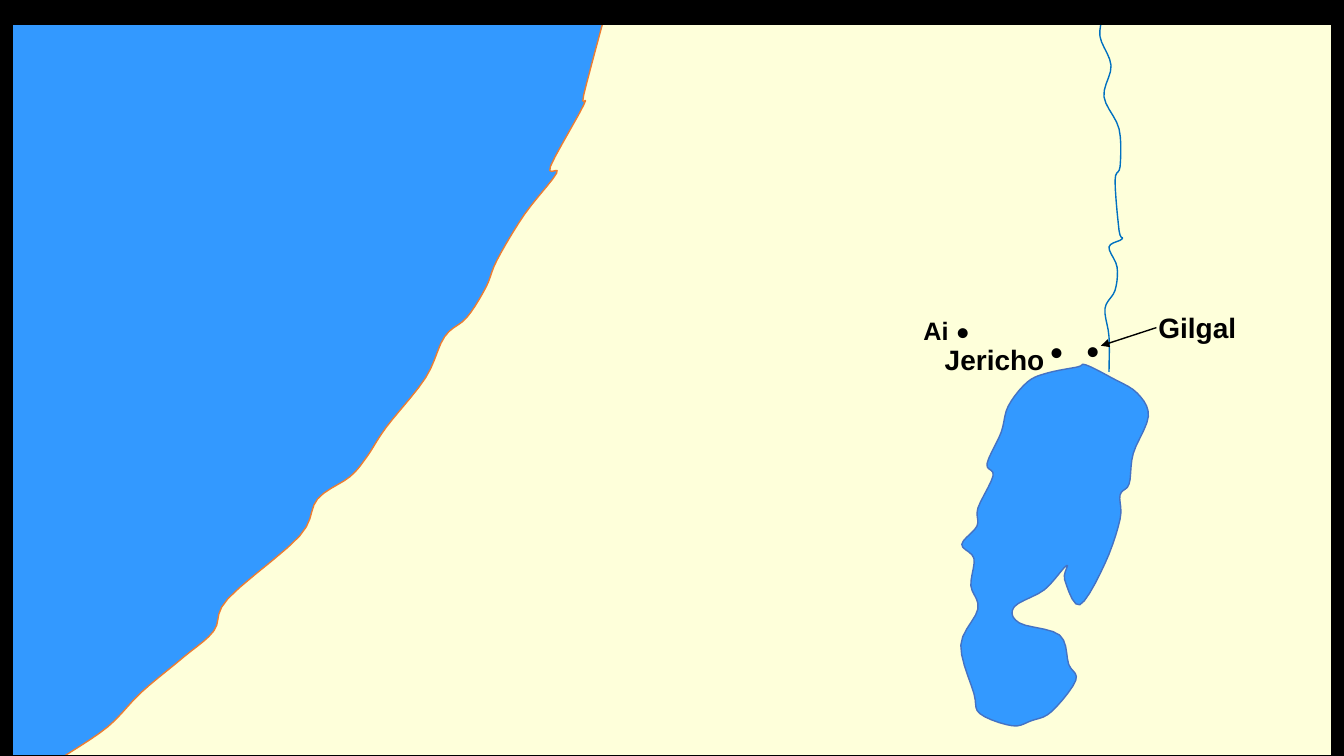
from lxml import etree
from pptx import Presentation
from pptx.dml.color import RGBColor
from pptx.enum.shapes import MSO_CONNECTOR, MSO_SHAPE
from pptx.enum.text import MSO_ANCHOR, PP_ALIGN
from pptx.oxml.ns import qn
from pptx.util import Inches, Pt

STRAIGHT, RECTANGLE = MSO_CONNECTOR.STRAIGHT, MSO_SHAPE.RECTANGLE
LEFT, CENTER, MIDDLE = PP_ALIGN.LEFT, PP_ALIGN.CENTER, MSO_ANCHOR.MIDDLE

LAND = RGBColor(0xFE, 0xFF, 0xDA)
WATER = RGBColor(0x33, 0x99, 0xFF)
COAST = RGBColor(0xED, 0x7D, 0x31)
SHORE = RGBColor(0x44, 0x72, 0xC4)
RIVER = RGBColor(0x00, 0x70, 0xC0)
BLACK = RGBColor(0x00, 0x00, 0x00)

CURVE_STEPS = 5
LABEL_HEIGHT = 0.44

# Turning points of the waters, in inches from the map corner
SEA_COAST = [
    (0.64, 7.5), (1.07, 7.21), (1.4, 6.87), (1.82, 6.52), (2.12, 6.26), (2.26, 5.94),
    (2.97, 5.32), (3.15, 4.95), (3.47, 4.73), (3.64, 4.53), (3.83, 4.24), (4.22, 3.75),
    (4.41, 3.34), (4.63, 3.15), (4.82, 2.85), (4.93, 2.58), (5.2, 2.13), (5.52, 1.72),
    (5.46, 1.65), (5.79, 1.04), (5.79, 0.94), (6.01, 0.11),
]
SEA_CORNERS = [(0, 0.11), (0, 7.5)]
LAKE_SHORE = [
    (10.69, 3.64), (10.39, 3.7), (10.19, 3.79), (10, 4.03), (9.93, 4.29), (9.79, 4.6),
    (9.85, 4.72), (9.7, 5.04), (9.69, 5.22), (9.54, 5.4), (9.66, 5.54), (9.63, 5.81),
    (9.7, 6.04), (9.53, 6.4), (9.66, 6.88), (9.72, 7.08), (10.04, 7.2), (10.23, 7.15),
    (10.43, 7.06), (10.67, 6.75), (10.6, 6.59), (10.51, 6.3), (10.11, 6.18), (10.06, 6.02),
    (10.36, 5.85), (10.58, 5.61), (10.56, 5.75), (10.71, 6), (10.96, 5.59), (11.11, 5.15),
    (11.11, 4.91), (11.2, 4.8), (11.24, 4.5), (11.39, 4.13), (11.28, 3.9), (11.03, 3.75),
    (10.77, 3.62),
]
RIVER_COURSE = [
    (10.95, 0.11), (10.91, 0.36), (11.02, 0.65), (10.95, 0.96), (11.1, 1.28), (11.11, 1.65),
    (11.06, 1.79), (11.1, 2.29), (11.13, 2.37), (11, 2.45), (11.08, 2.65), (11.06, 2.88),
    (10.96, 3.06), (11, 3.34), (11, 3.69),
]

# Centre of each town's dot
TOWN_DOTS = [(10.84, 3.47), (9.55, 3.28), (10.48, 3.48)]
# Name, left, top, width, text size, alignment
TOWN_NAMES = [
    ("Gilgal", 11.39, 3.03, 1.44, 20, LEFT),
    ("Jericho", 9.26, 3.34, 1.21, 20, CENTER),
    ("Ai", 9.06, 3.06, 0.5, 18, LEFT),
]


def smooth(turns, closed=False):
    """Draw a Catmull-Rom curve through the turning points."""
    if closed:
        chain = [turns[-1], *turns, turns[0], turns[1]]
    else:
        chain = [turns[0], *turns, turns[-1]]
    points = [chain[1]]
    for before, start, end, after in zip(chain, chain[1:], chain[2:], chain[3:]):
        for step in range(1, CURVE_STEPS + 1):
            t = step / CURVE_STEPS
            points.append(tuple(
                b + t * ((c - a) + t * ((2 * a - 5 * b + 4 * c - d)
                                        + t * (3 * b - a - 3 * c + d))) / 2
                for a, b, c, d in zip(before, start, end, after)))
    return points


def add_water(slide, left, top, points, line_color, closed=True):
    places = [(left + Inches(x), top + Inches(y)) for x, y in points]
    builder = slide.shapes.build_freeform(*places[0], scale=1.0)
    builder.add_line_segments(places[1:], close=closed)
    water = builder.convert_to_shape()
    water.shadow.inherit = False
    if closed:
        water.fill.solid()
        water.fill.fore_color.rgb = WATER
    else:
        water.fill.background()
    water.line.color.rgb = line_color
    water.line.width = Pt(1)


def add_label(slide, left, top, width, text, size, font, align):
    label = slide.shapes.add_textbox(left, top, width, Inches(LABEL_HEIGHT))
    label.text_frame.word_wrap = True
    label.text_frame.vertical_anchor = MIDDLE
    paragraph = label.text_frame.paragraphs[0]
    paragraph.text = text
    paragraph.alignment = align
    paragraph.font.name = font
    paragraph.font.size = Pt(size)
    paragraph.font.bold = font == "Arial"
    paragraph.font.color.rgb = BLACK


def add_towns(slide, left, top):
    half = LABEL_HEIGHT / 2
    for x, y in TOWN_DOTS:
        add_label(slide, left + Inches(x - half), top + Inches(y - half),
                  Inches(LABEL_HEIGHT), "•", 20, "Calibri", CENTER)
    for name, x, y, width, size, align in TOWN_NAMES:
        add_label(slide, left + Inches(x), top + Inches(y), Inches(width),
                  name, size, "Arial", align)

    # Arrow from the Gilgal label to its dot
    arrow = slide.shapes.add_connector(STRAIGHT, left + Inches(11.47), top + Inches(3.25),
                                       left + Inches(10.92), top + Inches(3.43))
    arrow.line.color.rgb = BLACK
    arrow.line.width = Pt(1)
    outline = arrow._element.spPr.find(qn("a:ln"))
    etree.SubElement(outline, qn("a:tailEnd"), type="triangle")
    etree.SubElement(arrow._element.spPr, qn("a:effectLst"))


def add_frame(slide, left, top, width, height):
    frame = slide.shapes.add_shape(RECTANGLE, left, top + Inches(0.12), width, height)
    frame.shadow.inherit = False
    frame.fill.background()
    frame.line.color.rgb = BLACK
    frame.line.width = Pt(18)


def build_map(slide, left, top, width, height):
    # Sea, lake and river
    add_water(slide, left, top, smooth(SEA_COAST) + SEA_CORNERS, COAST)
    add_water(slide, left, top, smooth(LAKE_SHORE, closed=True), SHORE)
    add_water(slide, left, top, smooth(RIVER_COURSE), RIVER, closed=False)
    # Towns and border
    add_towns(slide, left, top)
    add_frame(slide, left, top, width, height)


def main():
    prs = Presentation()
    prs.slide_width, prs.slide_height = Inches(13.33), Inches(7.5)
    slide = prs.slides.add_slide(prs.slide_layouts[6])
    slide.background.fill.solid()
    slide.background.fill.fore_color.rgb = LAND
    build_map(slide, 0, 0, prs.slide_width, prs.slide_height)
    prs.save("out.pptx")


if __name__ == "__main__":
    main()
